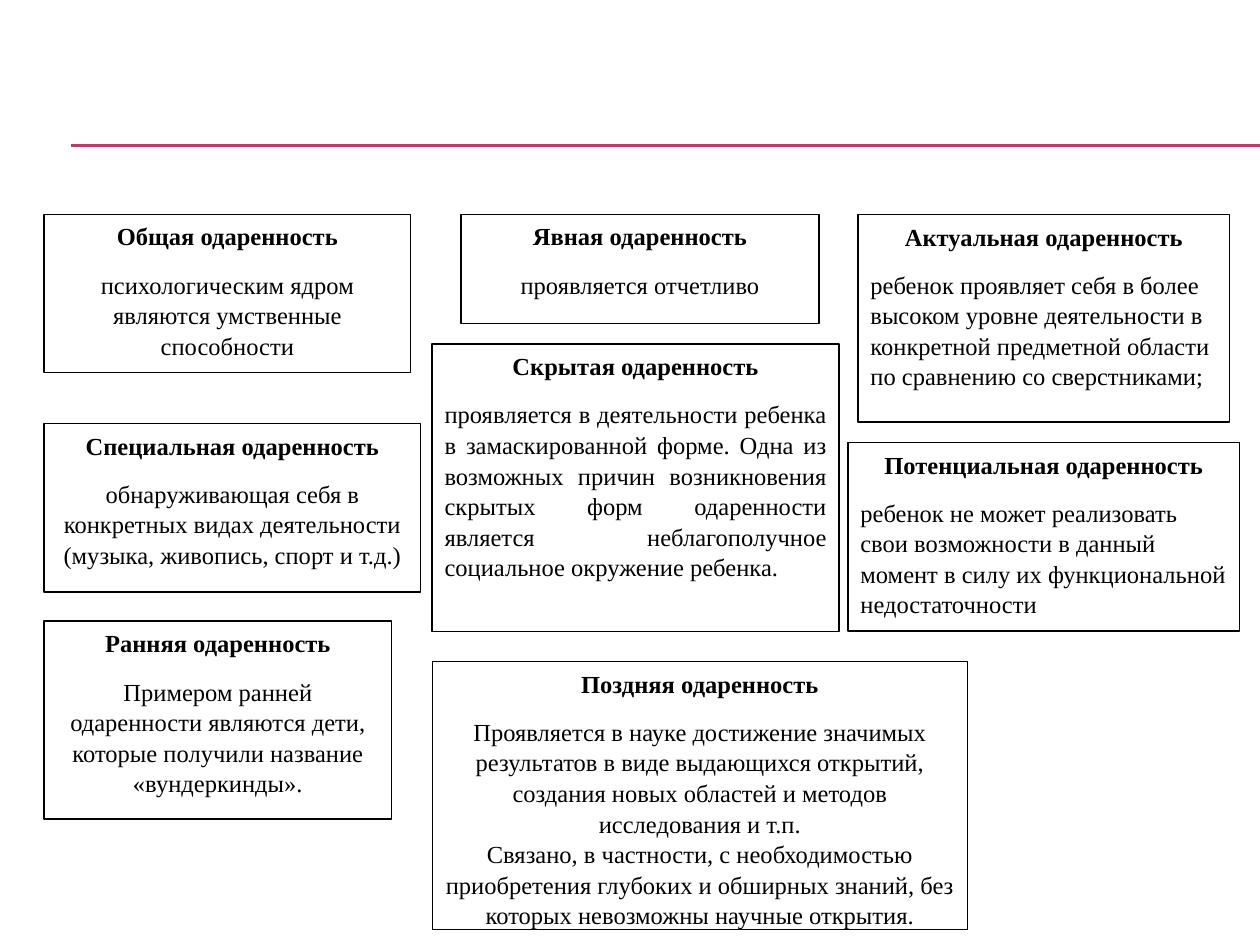
"""Builds a slide that sets out the kinds of giftedness in bordered cards."""
import pptx
import pptx.util
import pptx.dml.color
import pptx.enum.shapes
import pptx.enum.text
import pptx.oxml

Inches, Pt = pptx.util.Inches, pptx.util.Pt
RGB = pptx.dml.color.RGBColor.from_string
ALIGN = pptx.enum.text.PP_ALIGN

THEME = {
    "font": "Times New Roman", "size": Pt(14), "ink": RGB("000000"),
    "paper": RGB("FFFFFF"), "accent": RGB("B83D68"), "stroke": Pt(0.75),
    "leading": 1.04, "gap": Pt(10),
}
SLIDE_WIDTH, SLIDE_HEIGHT = 10, 7.5
RULE_LEFT, RULE_TOPS = 0.56, (1.15, 1.16)
LEFT_EDGE, MIDDLE_EDGE, TOP_ROW = 0.35, 3.43, 1.7

CARDS = [
    ((LEFT_EDGE, TOP_ROW, 2.91, 1.26), "Общая одаренность", ALIGN.CENTER,
     ["психологическим ядром являются умственные способности"]),
    ((LEFT_EDGE, 3.36, 2.99, 1.34), "Специальная одаренность", ALIGN.CENTER,
     ["обнаруживающая себя в конкретных видах деятельности "
      "(музыка, живопись, спорт и т.д.)"]),
    ((3.66, TOP_ROW, 2.84, 0.87), "Явная одаренность", ALIGN.CENTER,
     ["проявляется отчетливо"]),
    ((MIDDLE_EDGE, 2.73, 3.23, 2.28), "Скрытая одаренность", ALIGN.JUSTIFY,
     ["проявляется в деятельности ребенка в замаскированной форме. "
      "Одна из возможных причин возникновения скрытых форм одаренности "
      "является неблагополучное социальное окружение ребенка."]),
    ((6.81, TOP_ROW, 2.95, 1.65), "Актуальная одаренность", ALIGN.LEFT,
     ["ребенок проявляет себя в более высоком уровне деятельности в "
      "конкретной предметной области по сравнению со сверстниками;"]),
    ((6.73, 3.51, 3.11, 1.5), "Потенциальная одаренность", ALIGN.LEFT,
     ["ребенок не может реализовать свои возможности в данный момент "
      "в силу их функциональной недостаточности"]),
    ((LEFT_EDGE, 4.93, 2.76, 1.57), "Ранняя одаренность", ALIGN.CENTER,
     ["Примером ранней одаренности являются дети, "
      "которые получили название «вундеркинды»."]),
    ((MIDDLE_EDGE, 5.25, 4.25, 2.13), "Поздняя одаренность", ALIGN.CENTER,
     ["Проявляется в науке достижение значимых результатов в виде "
      "выдающихся открытий, создания новых областей и методов "
      "исследования и т.п.",
      "Связано, в частности, с необходимостью приобретения глубоких и "
      "обширных знаний, без которых невозможны научные открытия."]),
]


def add_rule(slide, top):
    rule = slide.shapes.add_connector(
        pptx.enum.shapes.MSO_CONNECTOR.STRAIGHT,
        Inches(RULE_LEFT), Inches(top), Inches(SLIDE_WIDTH), Inches(top))
    rule.line.color.rgb = THEME["accent"]
    rule.line.width = THEME["stroke"]
    properties = rule._element.spPr
    properties.append(properties.makeelement(
        pptx.oxml.ns.qn("a:effectLst"), {}))


def write(paragraph, wording, alignment, bold, gap):
    paragraph.text = wording
    paragraph.alignment = alignment
    paragraph.line_spacing = THEME["leading"]
    paragraph.space_after = gap
    font = paragraph.font
    font.name, font.size, font.bold = THEME["font"], THEME["size"], bold
    font.color.rgb = THEME["ink"]


def add_card(slide, box, heading, alignment, details):
    card = slide.shapes.add_shape(
        pptx.enum.shapes.MSO_SHAPE.RECTANGLE, *map(Inches, box))
    card.shadow.inherit = False
    card.fill.solid()
    card.fill.fore_color.rgb = THEME["paper"]
    card.line.color.rgb = THEME["ink"]
    card.line.width = THEME["stroke"]
    frame = card.text_frame
    frame.word_wrap = True
    frame.vertical_anchor = pptx.enum.text.MSO_ANCHOR.TOP
    write(frame.paragraphs[0], heading, ALIGN.CENTER, True, THEME["gap"])
    detail_gap = THEME["gap"] if len(details) == 1 else Pt(0)
    for detail in details:
        write(frame.add_paragraph(), detail, alignment, False, detail_gap)


def main():
    deck = pptx.Presentation()
    deck.slide_width = Inches(SLIDE_WIDTH)
    deck.slide_height = Inches(SLIDE_HEIGHT)
    slide = deck.slides.add_slide(deck.slide_layouts.get_by_name("Blank"))
    for top in RULE_TOPS:
        add_rule(slide, top)
    for card in CARDS:
        add_card(slide, *card)
    deck.save("out.pptx")


if __name__ == "__main__":
    main()
